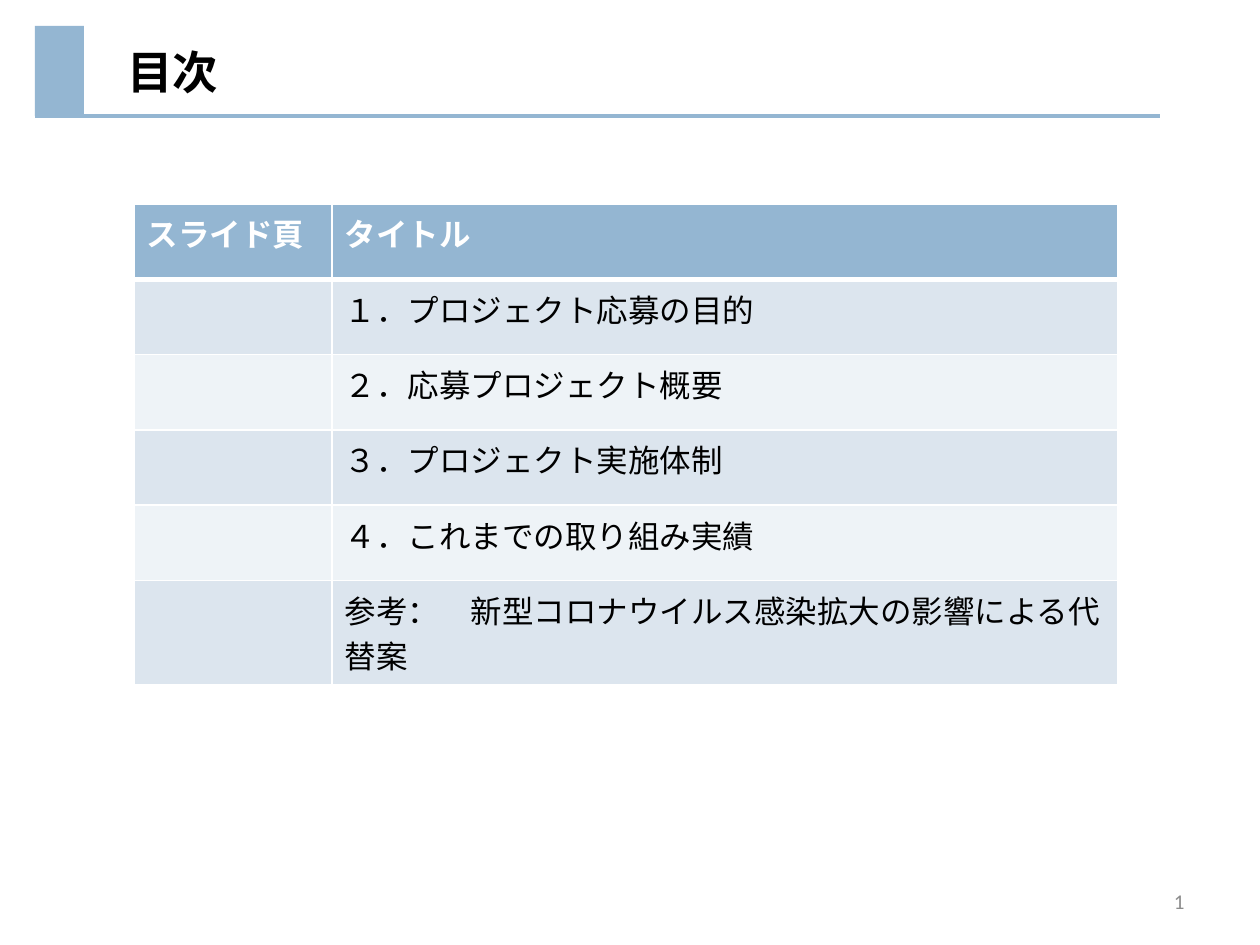
from lxml.etree import SubElement
from pptx import Presentation
from pptx.dml.color import RGBColor
from pptx.enum.shapes import MSO_CONNECTOR as CONN, MSO_SHAPE as SHAPE
from pptx.enum.text import MSO_ANCHOR as ANCHOR, PP_ALIGN as ALIGN
from pptx.oxml.ns import qn
from pptx.util import Emu, Pt

EMU_PER_PX = 914400 / 126
COLORS = {
    "accent": "94B6D2", "band_dark": "DCE5EE", "band_light": "EEF3F7",
    "white": "FFFFFF", "black": "000000", "gray": "8C8C8C",
}
TITLE = {"size": Pt(26), "bold": True, "name": "Calibri"}
PAGE = {"size": Pt(12), "bold": False, "name": "Calibri"}
HEADER = {"size": Pt(18), "bold": True, "name": "Calibri"}
BODY = {"size": Pt(18), "bold": False, "name": "Calibri"}
BODY_ARIAL = {**BODY, "name": "Arial"}

COLUMNS = [198, 786]
HEADINGS = ["スライド頁", "タイトル"]
ENTRIES = [
    [("１．プロジェクト応募の目的", BODY)],
    [("２．応募プロジェクト概要", BODY)],
    [("３．プロジェクト実施体制", BODY)],
    [("４．これまでの取り組み実績", BODY)],
    [("参考：　新型", BODY_ARIAL),
     ("コロナウイルス感染拡大の影響による代替案", BODY)],
]


def px(n):
    """Turn pixels into EMU."""
    return Emu(round(n * EMU_PER_PX))


def rgb(name):
    """Look up a named colour."""
    return RGBColor.from_string(COLORS[name])


def add_run(p, text, fmt, color):
    """Append a formatted run to a paragraph."""
    r = p.add_run()
    r.text = text
    for key, value in fmt.items():
        setattr(r.font, key, value)
    r.font.color.rgb = rgb(color)


def add_text(slide, box, text, fmt, color, align=ALIGN.LEFT):
    """Add a vertically centred text box."""
    tf = slide.shapes.add_textbox(*map(px, box)).text_frame
    tf.word_wrap = True
    tf.vertical_anchor = ANCHOR.MIDDLE
    p = tf.paragraphs[0]
    p.alignment = align
    add_run(p, text, fmt, color)


def add_rule(slide, start, end, color, width):
    """Add a straight line without a shadow."""
    line = slide.shapes.add_connector(CONN.STRAIGHT, *map(px, start + end))
    line.line.color.rgb = rgb(color)
    line.line.width = Pt(width)
    SubElement(line._element.spPr, qn("a:effectLst"))


def add_block(slide, box, color):
    """Add a plain filled rectangle."""
    sp = slide.shapes.add_shape(SHAPE.RECTANGLE, *map(px, box))
    sp.shadow.inherit = False
    sp.fill.solid()
    sp.fill.fore_color.rgb = rgb(color)
    sp.line.fill.background()


def style_cell(cell, fill, top=1, bottom=1):
    """Give a cell white borders and a solid fill."""
    tc_pr = cell._tc.get_or_add_tcPr()
    for side, width in {"L": 1, "R": 1, "T": top, "B": bottom}.items():
        ln = SubElement(tc_pr, qn(f"a:ln{side}"), w=str(Pt(width)))
        SubElement(SubElement(ln, qn("a:solidFill")), qn("a:srgbClr"),
                   val=COLORS["white"])
    cell.fill.solid()
    cell.fill.fore_color.rgb = rgb(fill)


def add_contents_table(slide, left, top, height):
    """Add the table of contents with banded rows."""
    rows = len(ENTRIES) + 1
    table = slide.shapes.add_table(
        rows, len(COLUMNS), *map(px, (left, top, sum(COLUMNS), height))).table
    for column, width in zip(table.columns, COLUMNS):
        column.width = px(width)
    for row in table.rows:
        row.height = px(height / rows)
    for i, heading in enumerate(HEADINGS):
        cell = table.cell(0, i)
        style_cell(cell, "accent", bottom=3)
        add_run(cell.text_frame.paragraphs[0], heading, HEADER, "white")
    for i, runs in enumerate(ENTRIES, 1):
        for cell in table.rows[i].cells:
            style_cell(cell, "band_dark" if i % 2 else "band_light",
                       top=3 if i == 1 else 1)
        for text, fmt in runs:
            add_run(table.cell(i, 1).text_frame.paragraphs[0], text, fmt, "black")


def main():
    """Build the contents slide."""
    prs = Presentation()
    prs.slide_width, prs.slide_height = px(1260), px(945)
    slide = prs.slides.add_slide(prs.slide_layouts[6])
    add_contents_table(slide, 134, 204, 452)
    add_rule(slide, (35, 116), (1160, 116), "accent", 2)
    add_block(slide, (35, 26, 49, 90), "accent")
    add_text(slide, (903, 876, 294, 50), "1", PAGE, "gray", ALIGN.RIGHT)
    add_text(slide, (115, 26, 869, 90), "目次", TITLE, "black")
    prs.save("out.pptx")


if __name__ == "__main__":
    main()
